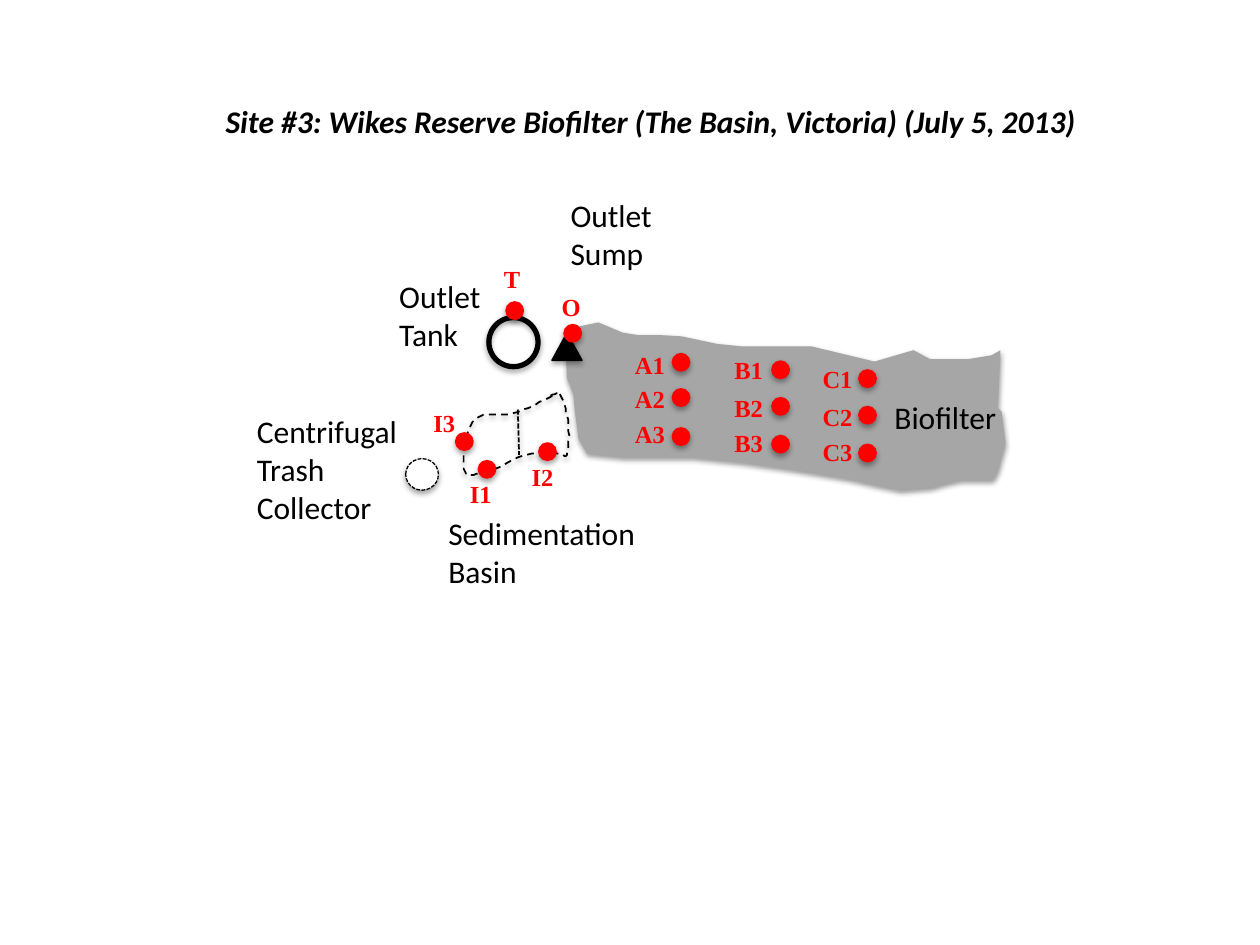
from pptx import Presentation
from pptx import util as u
from pptx.dml.color import RGBColor
from pptx.enum import dml, shapes, text
from pptx.oxml import parse_xml
from pptx.oxml.ns import nsdecls

PX = 9144
BLACK, WHITE, RED, GREY = "000000", "FFFFFF", "FF0000", "A6A6A6"
OVAL, TRI = shapes.MSO_SHAPE.OVAL, shapes.MSO_SHAPE.ISOSCELES_TRIANGLE
DASH, DOTS = dml.MSO_LINE.DASH, dml.MSO_LINE.SQUARE_DOT

TITLE = "Site #3: Wikes Reserve Biofilter (The Basin, Victoria) (July 5, 2013)"
NAMES = [
    ("Sedimentation\nBasin", (346, 403, 170, 71), False),
    ("Centrifugal Trash Collector", (194, 322, 158, 101), True),
    ("Outlet Sump", (443, 151, 88, 71), True),
    ("Outlet Tank", (307, 215, 88, 71), True),
    ("Biofilter", (700, 311, 102, 40), False),
]
GRID = [
    ("A", 494, 44, 533, [(273, 280), (300, 308), (328, 339)]),
    ("B", 573, 43, 612, [(277, 286), (307, 315), (335, 345)]),
    ("C", 643, 44, 681, [(284, 293), (314, 322), (342, 352)]),
]
POINTS = [
    ("I1", 363, 375, 38, 379, 365),
    ("I2", 412, 362, 38, 427, 351),
    ("I3", 334, 319, 38, 361, 343),
    ("O", 436, 227, 35, 447, 257),
    ("T", 390, 205, 33, 401, 239),
]
POINTS += [(f"{row}{n}", x, y, w, dx, dy)
           for row, x, w, dx, spots in GRID
           for n, (y, dy) in enumerate(spots, 1)]
FILTER = [
    (787, 282), (769, 285), (738, 285), (725, 278), (694, 287), (669, 281),
    (644, 275), (627, 275), (602, 275), (589, 275), (569, 273), (541, 267),
    (523, 266), (506, 266), (494, 264), (475, 256), (460, 259), (449, 278),
    (450, 300), (455, 313), (456, 324), (459, 348), (466, 360), (495, 363),
    (550, 363), (589, 367), (631, 373), (673, 380), (695, 385), (714, 389),
    (739, 387), (749, 384), (762, 381), (775, 381), (788, 381), (792, 374),
    (798, 352), (795, 327), (792, 324), (794, 278),
]
START = (437, 314)
CURVES = [
    ((437, 314), (449, 309), (437, 315)), ((432, 317), (416, 326), (407, 328)),
    ((398, 331), (388, 327), (382, 330)), ((376, 332), (374, 336), (371, 344)),
    ((369, 351), (366, 369), (369, 374)), ((371, 379), (379, 376), (387, 374)),
    ((394, 374), (405, 364), (414, 362)), ((424, 359), (436, 360), (442, 360)),
    ((448, 360), (449, 365), (450, 360)), ((452, 355), (452, 338), (450, 330)),
    ((449, 322), (444, 312), (444, 312)),
]


def tint(code):
    return RGBColor.from_string(code)


def shade(item, alpha=35, dist=23000):
    item.element.spPr.append(parse_xml(
        f'<a:effectLst {nsdecls("a")}><a:outerShdw blurRad="40000" dist="{dist}" '
        f'dir="5400000" rotWithShape="0"><a:srgbClr val="{BLACK}">'
        f'<a:alpha val="{alpha * 1000}"/></a:srgbClr></a:outerShdw></a:effectLst>'))


def stroke(line, width, dash=None):
    if not width:
        line.fill.background()
        return
    line.color.rgb = tint(BLACK)
    line.width = u.Pt(width)
    if dash:
        line.dash_style = dash


def paint(item, fill, width=0, dash=None):
    if fill:
        item.fill.solid()
        item.fill.fore_color.rgb = tint(fill)
    else:
        item.fill.background()
    stroke(item.line, width, dash)


def place(item, box):
    item.left, item.top, item.width, item.height = [n * PX for n in box]


def mark(kind, box, fill, width=0, dash=None):
    item = slide.shapes.add_shape(kind, *[n * PX for n in box])
    paint(item, fill, width, dash)
    shade(item)


def trace(dots, fill, width=0, dash=None, close=False, scale=PX):
    pen = slide.shapes.build_freeform(*dots[0], scale=scale)
    pen.add_line_segments(dots[1:], close=close)
    item = pen.convert_to_shape()
    paint(item, fill, width, dash)
    shade(item, 38, 20000)


def bend(start, curves, steps=8):
    dots = [start]
    for b, c, d in curves:
        a = dots[-1]
        for n in range(1, steps + 1):
            t = n / steps
            s = 1 - t
            dots.append(tuple(
                s**3 * p + 3 * s * s * t * q + 3 * s * t * t * r + t**3 * v
                for p, q, r, v in zip(a, b, c, d)))
    return dots


def write(item, words, size, face, color, bold=False, slant=False, wrap=False):
    frame = item.text_frame
    frame.text = words
    frame.word_wrap = wrap
    frame.auto_size = text.MSO_AUTO_SIZE.SHAPE_TO_FIT_TEXT
    frame.vertical_anchor = text.MSO_ANCHOR.TOP
    for para in frame.paragraphs:
        para.alignment = text.PP_ALIGN.LEFT
        font = para.font
        font.size, font.name = u.Pt(size), face
        font.bold, font.italic = bold, slant
        font.color.rgb = tint(color)


def label(words, box, *style, **more):
    item = slide.shapes.add_textbox(*[n * PX for n in box])
    write(item, words, *style, **more)


deck = Presentation()
deck.slide_width, deck.slide_height = 1000 * PX, 750 * PX
slide = deck.slides.add_slide(deck.slide_layouts[5])
title = slide.shapes.title
place(title, (169, 76, 702, 40))
write(title, TITLE, 18, "Calibri", BLACK, bold=True, slant=True)

trace(FILTER, GREY, close=True)
mark(OVAL, (388, 252, 39, 39), None, 3)
mark(OVAL, (322, 364, 26, 25), WHITE, 0.75, DOTS)
mark(TRI, (438, 264, 24, 22), BLACK, 0.75)
for words, box, wrap in NAMES:
    label(words, box, 18, "Calibri", BLACK, wrap=wrap)

trace(bend(START, CURVES), None, 1, DASH)
wall = slide.shapes.add_connector(
    shapes.MSO_CONNECTOR.STRAIGHT, *[n * PX for n in (411, 325, 412, 361)])
stroke(wall.line, 1, DOTS)
shade(wall, 38, 20000)

for name, x, y, w, dx, dy in POINTS:
    label(name, (x, y, w, 34), 14, "Times New Roman", RED, bold=True)
    mark(OVAL, (dx, dy, 15, 15), RED)

deck.save("out.pptx")
